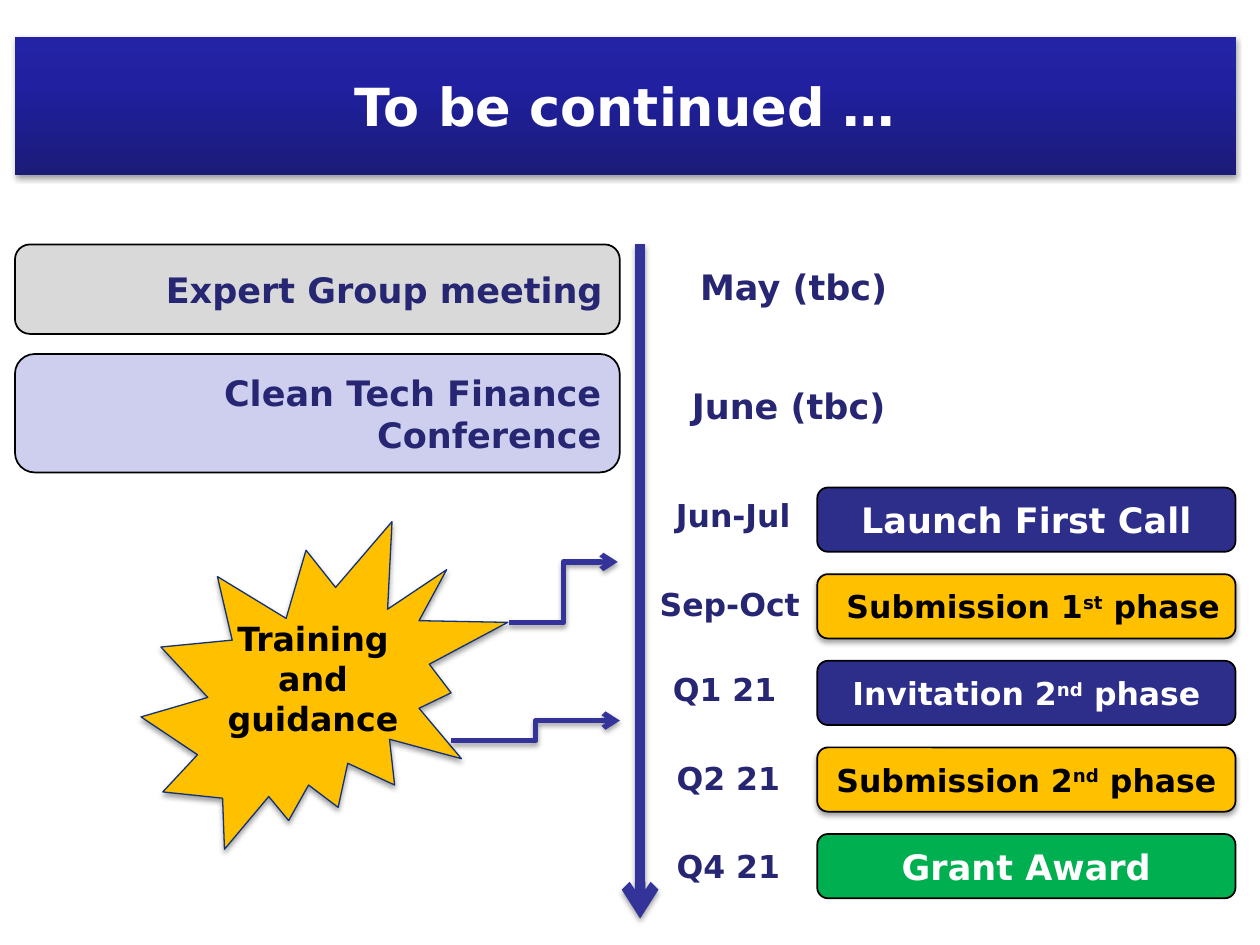
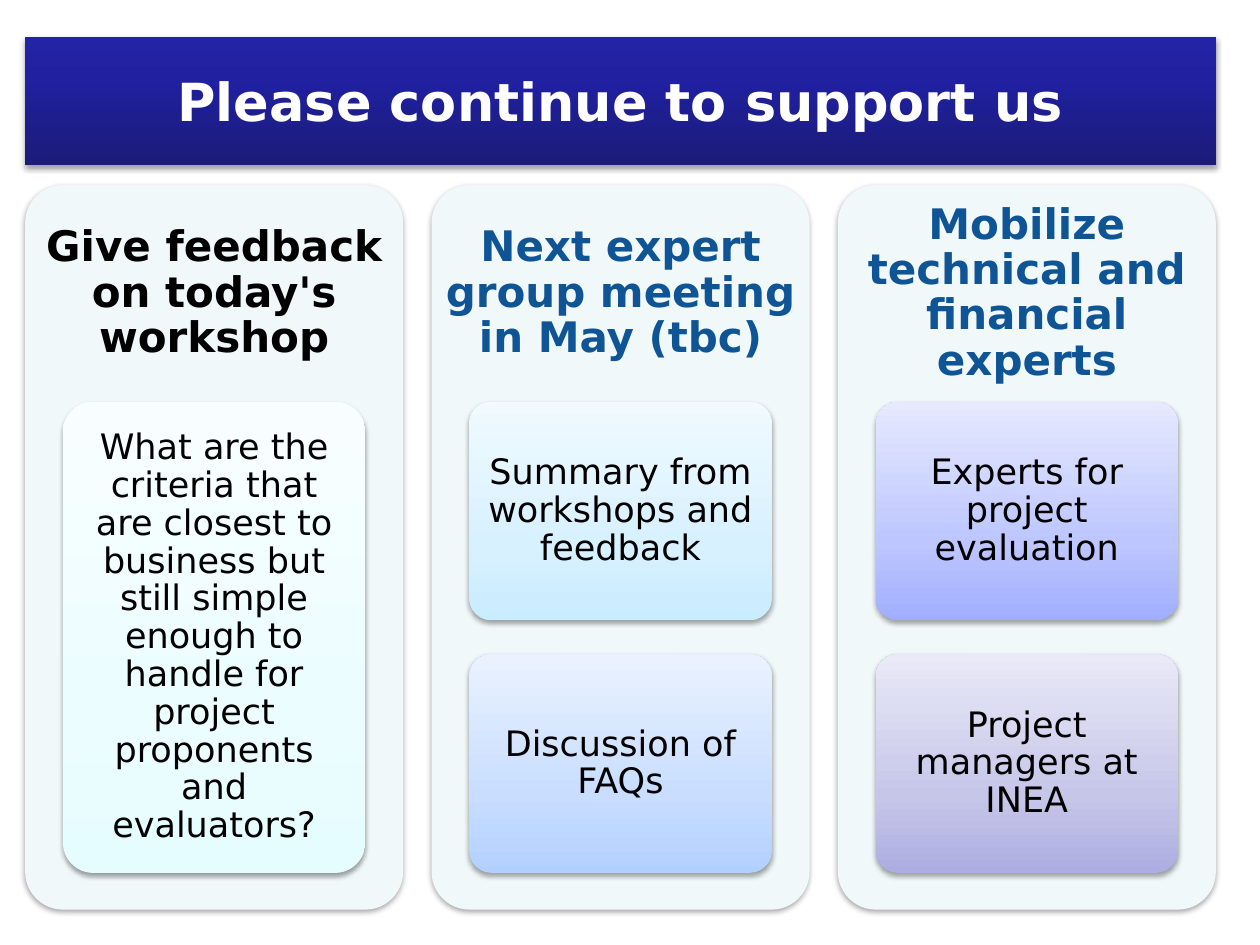
from copy import deepcopy
from dataclasses import dataclass

from lxml import etree
from pptx import Presentation
from pptx.dml.color import RGBColor
from pptx.enum import shapes, text
from pptx.oxml import ns
from pptx.util import Pt

ROUND = shapes.MSO_SHAPE.ROUNDED_RECTANGLE
CENTER, RIGHT = text.PP_ALIGN.CENTER, text.PP_ALIGN.RIGHT


@dataclass(frozen=True)
class Theme:
    font: str = "DejaVu Sans"
    white: str = "FFFFFF"
    black: str = "000000"
    navy: str = "262673"
    indigo: str = "2D2D8A"
    arrow: str = "333399"
    amber: str = "FFC000"
    seal_line: str = "133176"
    green: str = "00B050"
    grey: str = "D9D9D9"
    lilac: str = "CECEEF"
    panel: str = "F1F8F9"
    heading: str = "0F5494"
    # Gradients run from bottom to top, as (position, colour) stops.
    band: tuple = ((0, "1B1B78"), (0.65, "2020A0"), (1, "2323A6"))
    mint: tuple = ((0, "E6FDFF"), (0.35, "ECFDFF"), (1, "F8FEFF"))
    sky: tuple = ((0, "C9ECFF"), (0.35, "D8F1FF"), (1, "F0FAFF"))
    blue: tuple = ((0, "B2D0FF"), (0.35, "C8DDFF"), (1, "EAF2FF"))
    violet: tuple = ((0, "A1AEFF"), (0.35, "BDC6FE"), (1, "E6E9FF"))
    mauve: tuple = ((0, "ADADE1"), (0.35, "C6C6E9"), (1, "E9E9F7"))
    title_size: int = 30
    heading_size: int = 24
    text_size: int = 20
    callout_size: int = 19
    label_size: int = 18


T = Theme()


def rgb(value):
    return RGBColor.from_string(value)


def points(*values):
    return [Pt(v) for v in values]


def set_effects(sp, shadow):
    """Give the shape a soft shadow below it, or none at all."""
    sp_pr = sp._element.spPr
    effects = etree.SubElement(sp_pr, ns.qn("a:effectLst"))
    if shadow:
        outer = etree.SubElement(
            effects, ns.qn("a:outerShdw"), blurRad=str(Pt(3.1)),
            dist=str(Pt(1.7)), dir="5400000", rotWithShape="0")
        color = etree.SubElement(outer, ns.qn("a:srgbClr"), val=T.black)
        etree.SubElement(color, ns.qn("a:alpha"), val="36000")


def set_fill(sp, fill):
    """Fill with one colour, or with three gradient stops."""
    if isinstance(fill, str):
        sp.fill.solid()
        sp.fill.fore_color.rgb = rgb(fill)
        return
    sp.fill.gradient()
    sp.fill.gradient_angle = 90
    stops = sp._element.spPr.find(".//" + ns.qn("a:gsLst"))
    stops.insert(1, deepcopy(stops[0]))
    for stop, (position, color) in zip(sp.fill.gradient_stops, fill):
        stop.position = position
        stop.color.rgb = rgb(color)


def write(sp, parts, size, color, bold=True, align=CENTER, spacing=None,
          insets=None, wrap=True, anchor=text.MSO_ANCHOR.MIDDLE):
    """Write one paragraph; every second part is superscript."""
    tf = sp.text_frame
    tf.word_wrap = wrap
    tf.auto_size = text.MSO_AUTO_SIZE.NONE
    tf.vertical_anchor = anchor
    if insets:
        tf.margin_left = tf.margin_right = Pt(insets[0])
        tf.margin_top = tf.margin_bottom = Pt(insets[1])
    p = tf.paragraphs[0]
    p.alignment = align
    if spacing:
        p.line_spacing = spacing
    for i, part in enumerate([parts] if isinstance(parts, str) else parts):
        r = p.add_run()
        r.text = part
        r.font.name, r.font.size, r.font.bold = T.font, Pt(size), bold
        r.font.color.rgb = rgb(color)
        if i % 2:
            r._r.get_or_add_rPr().set("baseline", "30000")


def add_box(s, box, fill, line=None, width=1, shadow=False, kind=ROUND, adj=None):
    sp = s.shapes.add_shape(kind, *points(*box))
    set_fill(sp, fill)
    if line:
        sp.line.color.rgb = rgb(line)
        sp.line.width = Pt(width)
    else:
        sp.line.fill.background()
    if adj:
        sp.adjustments[0] = adj
    set_effects(sp, shadow)
    return sp


def add_arrow(s, start, end, width, kind=shapes.MSO_CONNECTOR.ELBOW):
    cxn = s.shapes.add_connector(kind, *points(*start, *end))
    cxn.line.color.rgb = rgb(T.arrow)
    cxn.line.width = Pt(width)
    ln = cxn._element.spPr.find(ns.qn("a:ln"))
    etree.SubElement(ln, ns.qn("a:tailEnd"), type="arrow")
    set_effects(cxn, True)


def add_titled_slide(prs, title, box):
    s = prs.slides.add_slide(prs.slide_layouts.get_by_name("Title Only"))
    sp = s.shapes.title
    sp.left, sp.top, sp.width, sp.height = points(*box)
    set_fill(sp, T.band)
    set_effects(sp, True)
    write(sp, title, T.title_size, T.white)
    return s


def add_date(s, date, center, top, size=T.label_size):
    width = 96
    sp = add_box(s, (center - width / 2, top, width, 36.7), T.white)
    write(sp, date, size, T.navy, wrap=False)


def add_event(s, name, top, height, fill):
    sp = add_box(s, (8.6, top, 345.6, height), fill, T.black)
    write(sp, name, T.text_size, T.navy, align=RIGHT)


def add_milestone(s, name, top, fill, color, size, align):
    sp = add_box(s, (467, top, 239, 36.7), fill, T.black,
                 shadow=fill == T.amber)
    write(sp, name, size, color, align=align)


def add_training_callout(s):
    add_box(s, (80.6, 298.1, 209.5, 187.2), T.amber, T.seal_line, 0.75,
            shadow=True, kind=shapes.MSO_SHAPE.EXPLOSION2)
    sp = s.shapes.add_textbox(*points(122.4, 349.9, 113, 76.3))
    write(sp, "Training and guidance", T.callout_size, T.black,
          anchor=text.MSO_ANCHOR.TOP)
    add_arrow(s, (290.9, 355.7), (353, 321.1), 3)
    add_arrow(s, (257.8, 423.4), (354.2, 411.8), 3)


def add_panel(s, left, heading, color, cards):
    """Add a column with a heading and equally tall cards."""
    top, width, heading_height = 105.8, 216, 123.8
    add_box(s, (left, top, width, 414), T.panel, shadow=True, adj=0.1)
    sp = s.shapes.add_textbox(*points(left, top, width, heading_height))
    write(sp, heading, T.heading_size, color, spacing=0.9, insets=(7.2, 7.2))
    gap = 19.4
    height = (269.2 - gap * (len(cards) - 1)) / len(cards)
    for i, (words, fill) in enumerate(cards):
        card_top = top + heading_height + i * (height + gap)
        card = add_box(s, (left + 21.6, card_top, 172.8, height), fill,
                       shadow=True, adj=0.1)
        write(card, words, T.text_size, T.black, bold=False, spacing=0.9,
              insets=(4.3, 2.9))


def build_timeline(prs):
    s = add_titled_slide(prs, "To be continued …", (8.6, 20.9, 697.7, 79.2))
    add_date(s, "May (tbc)", 453.6, 145.4, T.text_size)
    add_date(s, "June (tbc)", 450.7, 213.1, T.text_size)
    milestones = [
        ("Jun-Jul", 419, 275.8, "Launch First Call",
         T.indigo, T.white, T.text_size, CENTER),
        ("Sep-Oct", 417, 326.9, ("Submission 1", "st", " phase"),
         T.amber, T.black, T.label_size, RIGHT),
        ("Q1 21", 414, 375.1, ("Invitation 2", "nd", " phase"),
         T.indigo, T.white, T.label_size, CENTER),
        ("Q2 21", 416.2, 426.2, ("Submission 2", "nd", " phase"),
         T.amber, T.black, T.label_size, CENTER),
        ("Q4 21", 416.2, 476.6, "Grant Award",
         T.green, T.white, T.text_size, CENTER),
    ]
    for i, (date, center, date_top, name, *look) in enumerate(milestones):
        add_date(s, date, center, date_top)
        add_milestone(s, name, 278.6 + 49.5 * i, *look)
    add_arrow(s, (365.8, 139.7), (365.8, 524.9), 6,
              shapes.MSO_CONNECTOR.STRAIGHT)
    add_event(s, "Expert Group meeting", 139.7, 51.1, T.grey)
    add_event(s, "Clean Tech Finance Conference", 202.3, 67.7, T.lilac)
    add_training_callout(s)


def build_support(prs):
    s = add_titled_slide(prs, "Please continue to support us",
                         (14.4, 20.9, 680.4, 73.4))
    panels = [
        ("Give feedback on today's workshop", T.black, [
            ("What are the criteria that are closest to business but still "
             "simple enough to handle for project proponents and "
             "evaluators?", T.mint)]),
        ("Next expert group meeting in May (tbc)", T.heading, [
            ("Summary from workshops and feedback", T.sky),
            ("Discussion of FAQs", T.blue)]),
        ("Mobilize technical and financial experts", T.heading, [
            ("Experts for project evaluation", T.violet),
            ("Project managers at INEA", T.mauve)]),
    ]
    for i, panel in enumerate(panels):
        add_panel(s, 14.4 + 232.2 * i, *panel)


def main():
    prs = Presentation()
    prs.slide_width, prs.slide_height = points(720, 540)
    build_timeline(prs)
    build_support(prs)
    prs.save("out.pptx")


if __name__ == "__main__":
    main()
